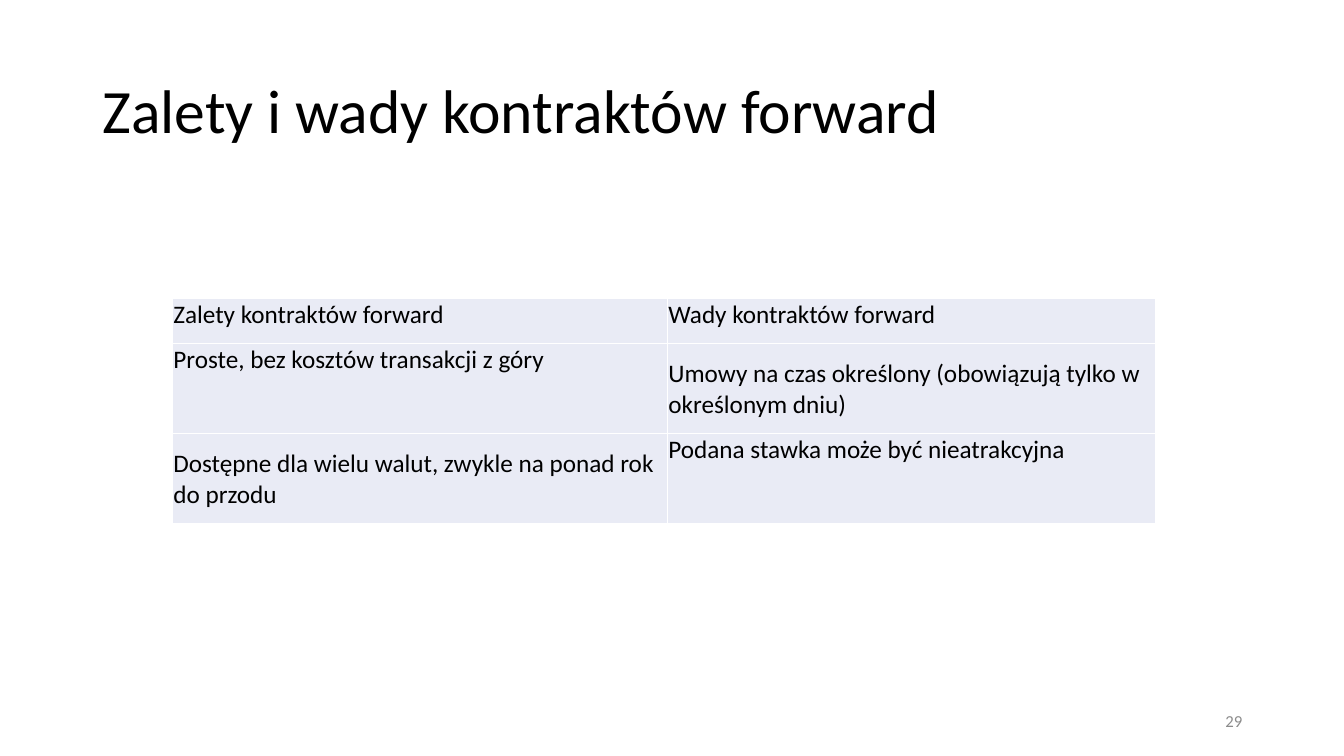
from dataclasses import dataclass

import lxml.etree
import pptx
import pptx.dml.color
import pptx.enum.text
import pptx.oxml.ns
import pptx.util

Inches = pptx.util.Inches
Anchor = pptx.enum.text.MSO_ANCHOR
Align = pptx.enum.text.PP_ALIGN


@dataclass(frozen=True)
class Theme:
    font: str = "Calibri"
    ink: str = "000000"
    muted: str = "8C8C8C"
    cell: str = "E9EBF5"
    border: str = "FFFFFF"
    border_width: float = 1
    title_size: int = 44
    table_size: int = 18
    number_size: int = 12


THEME = Theme()
ROWS = [
    [("Zalety kontraktów forward", Anchor.TOP),
     ("Wady kontraktów forward", Anchor.TOP)],
    [("Proste, bez kosztów transakcji z góry", Anchor.TOP),
     ("Umowy na czas określony (obowiązują tylko w określonym dniu)", Anchor.MIDDLE)],
    [("Dostępne dla wielu walut, zwykle na ponad rok do przodu", Anchor.MIDDLE),
     ("Podana stawka może być nieatrakcyjna", Anchor.TOP)],
]
COLUMN_SHARES = [4.91, 4.84]
ROW_SHARES = [1, 2, 2]


def rgb(value):
    return pptx.dml.color.RGBColor.from_string(value)


def add_span(para, text, size, color):
    span = para.add_run()
    span.text = text
    span.font.name = THEME.font
    span.font.size = pptx.util.Pt(size)
    span.font.color.rgb = rgb(color)


def add_line(page, box, text, size, color, align=Align.LEFT, spacing=1.0):
    frame = page.shapes.add_textbox(*map(Inches, box)).text_frame
    frame.word_wrap = True
    frame.vertical_anchor = Anchor.MIDDLE
    para = frame.paragraphs[0]
    para.alignment = align
    para.line_spacing = spacing
    add_span(para, text, size, color)


def add_borders(cell):
    properties = cell._tc.get_or_add_tcPr()
    qn = pptx.oxml.ns.qn
    width = str(pptx.util.Pt(THEME.border_width))
    for side in ("lnL", "lnR", "lnT", "lnB"):
        line = lxml.etree.SubElement(properties, qn(f"a:{side}"), w=width)
        fill = lxml.etree.SubElement(line, qn("a:solidFill"))
        lxml.etree.SubElement(fill, qn("a:srgbClr"), val=THEME.border)


def fill_cell(cell, text, anchor):
    add_borders(cell)
    cell.fill.solid()
    cell.fill.fore_color.rgb = rgb(THEME.cell)
    cell.vertical_anchor = anchor
    cell.margin_left = cell.margin_right = cell.margin_top = Inches(0.01)
    cell.margin_bottom = 0
    add_span(cell.text_frame.paragraphs[0], text, THEME.table_size, THEME.ink)


def add_comparison(page, box):
    left, top, width, height = box
    table = page.shapes.add_table(
        len(ROWS), len(COLUMN_SHARES), *map(Inches, box)).table
    table.first_row = False
    table.horz_banding = False
    for column, share in zip(table.columns, COLUMN_SHARES):
        column.width = Inches(width * share / sum(COLUMN_SHARES))
    for row, share, entries in zip(table.rows, ROW_SHARES, ROWS):
        row.height = Inches(height * share / sum(ROW_SHARES))
        for cell, (text, anchor) in zip(row.cells, entries):
            fill_cell(cell, text, anchor)


def main():
    deck = pptx.Presentation()
    deck.slide_width = Inches(13.33)
    deck.slide_height = Inches(7.5)
    page = deck.slides.add_slide(deck.slide_layouts[6])
    add_line(page, (0.92, 0.4, 11.5, 1.45), "Zalety i wady kontraktów forward",
             THEME.title_size, THEME.ink, spacing=0.9)
    add_comparison(page, (1.71, 2.96, 9.75, 2.24))
    add_line(page, (9.42, 6.95, 3, 0.4), "29",
             THEME.number_size, THEME.muted, align=Align.RIGHT)
    deck.save("out.pptx")


if __name__ == "__main__":
    main()
